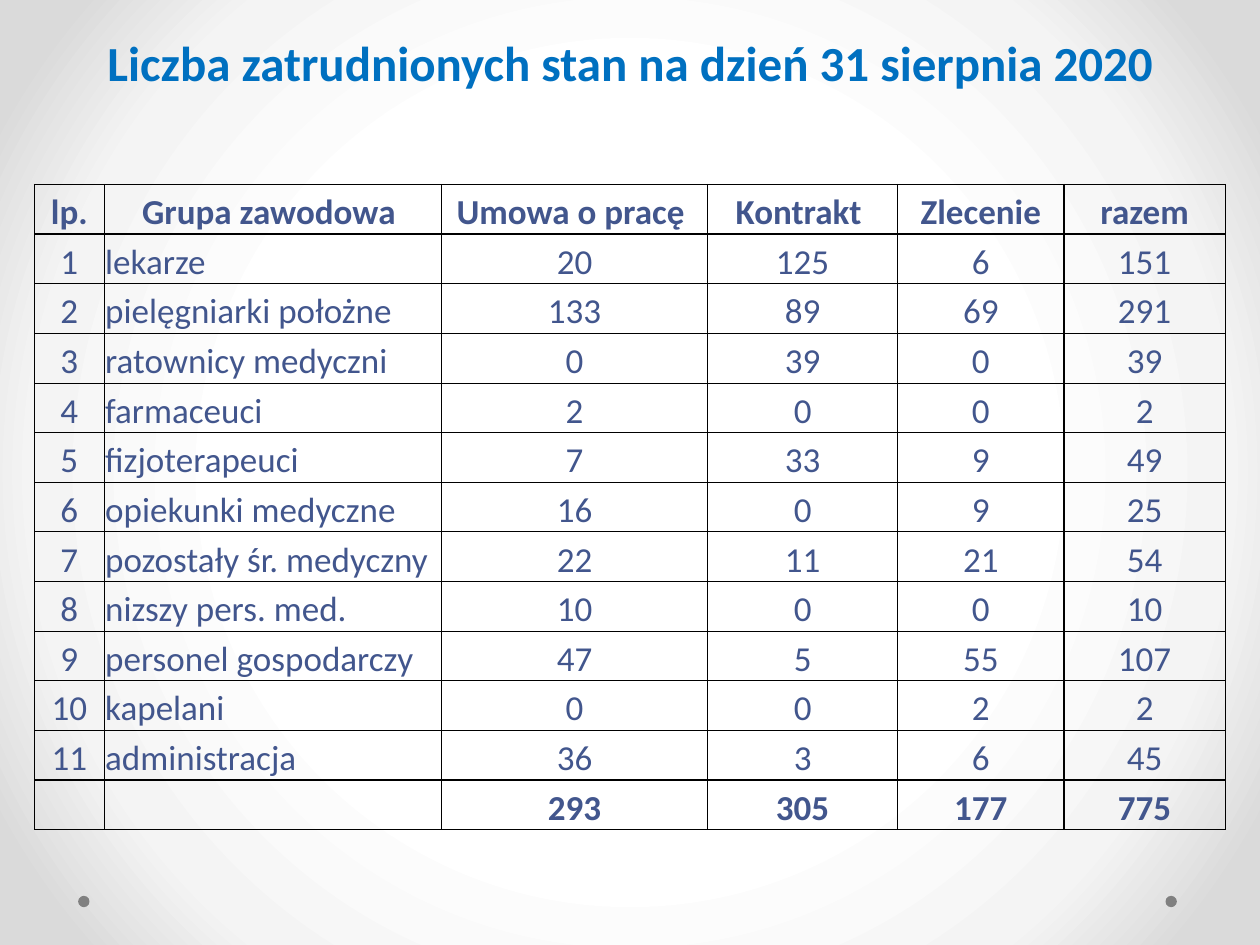
from pptx import Presentation
from pptx.dml.color import RGBColor
from pptx.enum.shapes import MSO_SHAPE
from pptx.enum.text import MSO_ANCHOR, PP_ALIGN
from pptx.oxml import parse_xml
from pptx.oxml.ns import nsdecls, qn
from pptx.util import Pt

# Content
TITLE = "Liczba zatrudnionych stan na dzień 31 sierpnia 2020"
ROWS = [
    ("lp.", "Grupa zawodowa ", "Umowa o pracę ", "Kontrakt ", "Zlecenie", "razem"),
    (1, "lekarze", 20, 125, 6, 151),
    (2, "pielęgniarki położne", 133, 89, 69, 291),
    (3, "ratownicy medyczni", 0, 39, 0, 39),
    (4, "farmaceuci", 2, 0, 0, 2),
    (5, "fizjoterapeuci", 7, 33, 9, 49),
    (6, "opiekunki medyczne", 16, 0, 9, 25),
    (7, "pozostały śr. medyczny", 22, 11, 21, 54),
    (8, "nizszy pers. med.", 10, 0, 0, 10),
    (9, "personel gospodarczy", 47, 5, 55, 107),
    (10, "kapelani", 0, 0, 2, 2),
    (11, "administracja", 36, 3, 6, 45),
    ("", "", 293, 305, 177, 775),
]

# Format
COLORS = {"title": "0070C0", "text": "42568D", "line": "000000", "dot": "808080"}
STOPS = [(50, "FFFFFF"), (76, "F4F4F4"), (92, "DADADA")]
WIDTHS = [39.6, 192.96, 151.92, 108.72, 95.04, 92.16]
HIGH = 28.35
LAST = len(ROWS) - 1
HEAD = {"name": "Calibri", "size": Pt(28), "bold": True}
BODY = {"name": "Calibri", "size": Pt(20)}
INSET = {"margin_left": Pt(0.72), "margin_right": Pt(0.72),
         "margin_top": Pt(0.72), "margin_bottom": Pt(0),
         "vertical_anchor": MSO_ANCHOR.BOTTOM}


def apply(obj, vals):
    for key, val in vals.items():
        setattr(obj, key, val)


def write(para, text, font, color, align):
    para.alignment = align
    run = para.add_run()
    run.text = text
    apply(run.font, font)
    run.font.color.rgb = RGBColor.from_string(COLORS[color])


def border(cell, sides):
    props = cell._tc.get_or_add_tcPr()
    for spot, (side, thick) in enumerate(sides.items()):
        props.insert(spot, parse_xml(
            f'<a:ln{side} {nsdecls("a")} w="{Pt(1 if thick else 0.5)}">'
            f'<a:solidFill><a:srgbClr val="{COLORS["line"]}"/></a:solidFill>'
            f'</a:ln{side}>'))


def thick_row(line):
    return line in (0, 1, LAST, LAST + 1)


def thick_col(line, row):
    return line >= 5 or (line == 0 and row in (0, LAST)) or (line == 2 and row == 0)


deck = Presentation()
apply(deck, {"slide_width": Pt(720), "slide_height": Pt(540)})
slide = deck.slides.add_slide(deck.slide_layouts[6])

# Radial background
slide.background.fill.gradient()
grad = slide.element.find(".//" + qn("a:gradFill"))
stops = "".join(f'<a:gs pos="{pos * 1000}"><a:srgbClr val="{tint}"/></a:gs>'
                for pos, tint in STOPS)
grad.getparent().replace(grad, parse_xml(
    f'<a:gradFill {nsdecls("a")} rotWithShape="1"><a:gsLst>{stops}</a:gsLst>'
    '<a:path path="circle"><a:fillToRect l="50000" t="50000" r="50000" b="50000"/>'
    '</a:path></a:gradFill>'))

# Corner dots
for left in (666, 44.64):
    dot = slide.shapes.add_shape(MSO_SHAPE.OVAL, Pt(left), Pt(511.92), Pt(6.48), Pt(6.48))
    dot.shadow.inherit = False
    dot.fill.solid()
    dot.fill.fore_color.rgb = RGBColor.from_string(COLORS["dot"])
    dot.line.fill.background()

# Title
frame = slide.shapes.add_textbox(Pt(36), Pt(0), Pt(648), Pt(71.28)).text_frame
apply(frame, {"word_wrap": True, "vertical_anchor": MSO_ANCHOR.MIDDLE})
write(frame.paragraphs[0], TITLE, HEAD, "title", PP_ALIGN.CENTER)

# Staff table
table = slide.shapes.add_table(len(ROWS), len(WIDTHS), Pt(19.8), Pt(105.5),
                               Pt(sum(WIDTHS)), Pt(HIGH * len(ROWS))).table
apply(table, {"first_row": False, "horz_banding": False})
for col, width in zip(table.columns, WIDTHS):
    col.width = Pt(width)
for r, row in enumerate(ROWS):
    table.rows[r].height = Pt(HIGH)
    for c, value in enumerate(row):
        cell = table.cell(r, c)
        apply(cell, INSET)
        cell.fill.background()
        border(cell, {"L": thick_col(c, r), "R": thick_col(c + 1, r),
                      "T": thick_row(r), "B": thick_row(r + 1)})
        if value != "":
            left = c == 1 and r > 0
            write(cell.text_frame.paragraphs[0], str(value),
                  {**BODY, "bold": r in (0, LAST)}, "text",
                  PP_ALIGN.LEFT if left else PP_ALIGN.CENTER)

deck.save("out.pptx")
